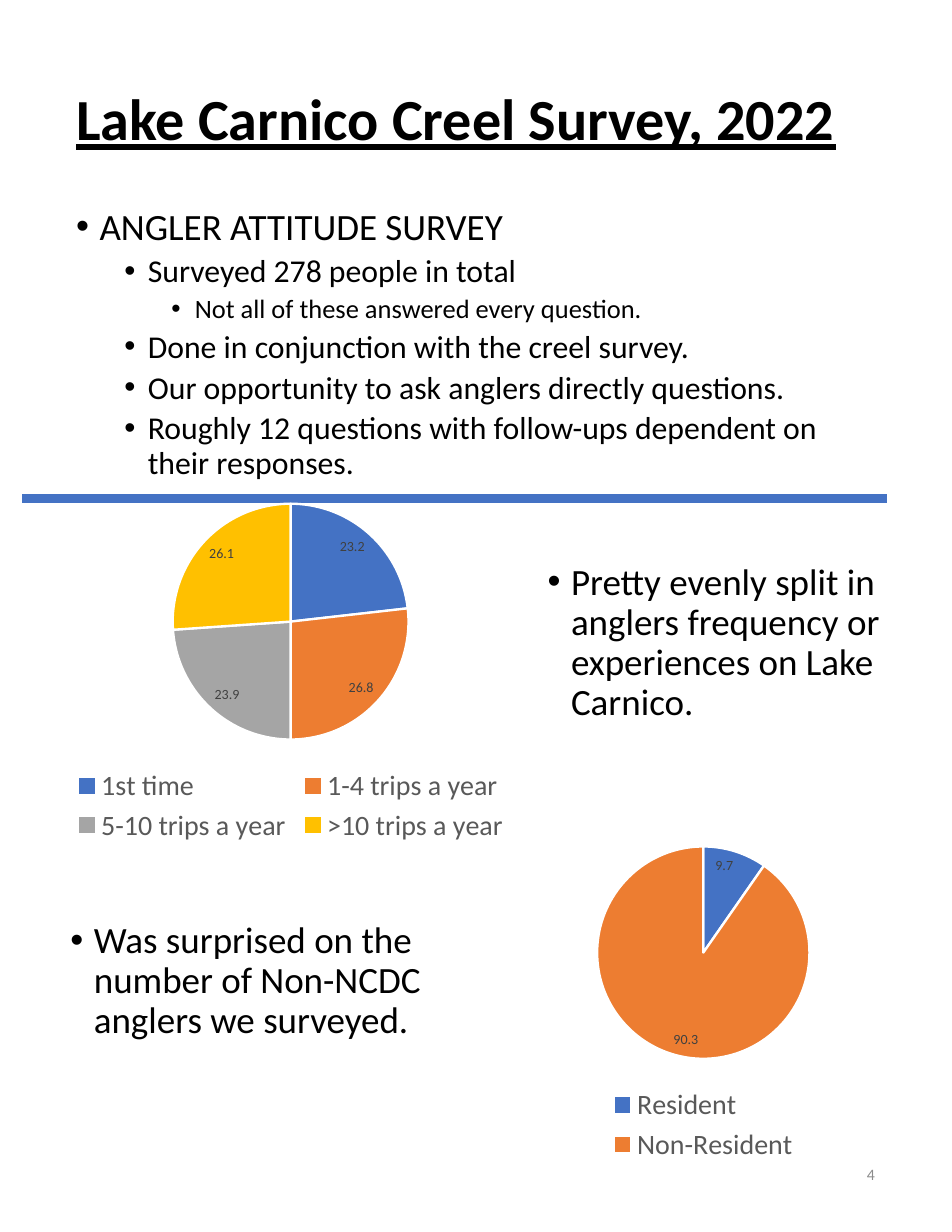
from lxml import etree
from pptx import Presentation
from pptx import util as u
from pptx.chart.data import CategoryChartData
from pptx.dml.color import RGBColor
from pptx.enum import chart as ch, shapes, text
from pptx.oxml.ns import qn

COLORS = {"black": "000000", "white": "FFFFFF", "blue": "4472C4", "orange": "ED7D31",
          "gray": "A5A5A5", "gold": "FFC000", "legend": "595959", "label": "404040",
          "number": "8C8C8C"}
SLICES = ["blue", "orange", "gray", "gold"]
# Per list level: text size, space before, left indent
LEVELS = [(23.8, 8.5, 0.21), (20.4, 4.2, 0.64), (17, 4.2, 1.06)]
HANG = 0.21


def rgb(name):
    return RGBColor.from_string(COLORS[name])


class SlideBuilder:
    font = "Calibri"

    def __init__(self, prs):
        self.slide = prs.slides.add_slide(prs.slide_layouts[1])

    def style(self, font, size, color="black", **values):
        for key, value in {"name": self.font, "size": u.Pt(size), **values}.items():
            setattr(font, key, value)
        font.color.rgb = rgb(color)

    def place(self, sp, box, anchor):
        for key, value in zip(("left", "top", "width", "height"), box):
            setattr(sp, key, u.Inches(value))
        tf = sp.text_frame
        frame = {"word_wrap": True, "auto_size": text.MSO_AUTO_SIZE.NONE,
                 "vertical_anchor": anchor}
        for key, value in frame.items():
            setattr(tf, key, value)
        return tf

    def textbox(self):
        return self.slide.shapes.add_textbox(0, 0, 0, 0)

    def line_of_text(self, sp, box, words, size, align, color="black", **values):
        p = self.place(sp, box, text.MSO_ANCHOR.MIDDLE).paragraphs[0]
        p.alignment, p.line_spacing = align, 0.9
        r = p.add_run()
        r.text = words
        self.style(r.font, size, color, **values)

    def bullets(self, sp, box, items):
        tf = self.place(sp, box, text.MSO_ANCHOR.TOP)
        for i, (level, words) in enumerate(items):
            p = tf.add_paragraph() if i else tf.paragraphs[0]
            size, before, indent = LEVELS[level]
            paragraph = {"level": level, "line_spacing": 0.9, "space_before": u.Pt(before),
                         "alignment": text.PP_ALIGN.LEFT}
            for key, value in paragraph.items():
                setattr(p, key, value)
            pPr = p._p.get_or_add_pPr()
            pPr.set("marL", str(u.Inches(indent)))
            pPr.set("indent", str(-u.Inches(HANG)))
            etree.SubElement(pPr, qn("a:buFont")).set("typeface", "Arial")
            etree.SubElement(pPr, qn("a:buChar")).set("char", "•")
            r = p.add_run()
            r.text = words
            self.style(r.font, size)

    def rule(self, x1, x2, y, width):
        line = self.slide.shapes.add_connector(
            shapes.MSO_CONNECTOR.STRAIGHT, *map(u.Inches, (x1, y, x2, y)))
        line.line.color.rgb = rgb("blue")
        line.line.width = u.Pt(width)
        etree.SubElement(line._element.spPr, qn("a:effectLst"))

    def pie(self, box, values):
        data = CategoryChartData()
        data.categories = list(values)
        data.add_series("Series 1", list(values.values()))
        chart = self.slide.shapes.add_chart(
            ch.XL_CHART_TYPE.PIE, *map(u.Inches, box), data).chart
        self.style(chart.font, 10)
        chart.has_title = False
        chart.has_legend = True
        chart.legend.position = ch.XL_LEGEND_POSITION.BOTTOM
        chart.legend.include_in_layout = False
        self.style(chart.legend.font, 18, "legend")
        plot = chart.plots[0]
        plot.vary_by_categories = True
        for i, color in enumerate(SLICES[:len(values)]):
            fmt = plot.series[0].points[i].format
            fmt.fill.solid()
            fmt.fill.fore_color.rgb = rgb(color)
            fmt.line.color.rgb = rgb("white")
            fmt.line.width = u.Pt(1.5)
        labels = plot.series[0].data_labels
        labels.show_value = True
        labels.show_percentage = False
        labels.position = ch.XL_LABEL_POSITION.INSIDE_END
        self.style(labels.font, 9, "label")


def main():
    prs = Presentation()
    prs.slide_width, prs.slide_height = u.Inches(8.5), u.Inches(11)
    s = SlideBuilder(prs)
    title, body = s.slide.placeholders

    # Title and survey summary
    s.line_of_text(title, (0.58, 0.59, 7.33, 1), "Lake Carnico Creel Survey, 2022", 37.4,
                   text.PP_ALIGN.LEFT, bold=True, underline=True)
    s.bullets(body, (0.58, 1.81, 7.33, 8.83), [
        (0, "ANGLER ATTITUDE SURVEY"),
        (1, "Surveyed 278 people in total"),
        (2, "Not all of these answered every question."),
        (1, "Done in conjunction with the creel survey."),
        (1, "Our opportunity to ask anglers directly questions."),
        (1, "Roughly 12 questions with follow-ups dependent on their responses."),
    ])

    # Slide number
    s.line_of_text(s.textbox(), (6, 10.2, 1.91, 0.59), "4", 10.2,
                   text.PP_ALIGN.RIGHT, "number")

    # Trip frequency
    s.bullets(s.textbox(), (4.79, 4.98, 3.52, 2.6), [
        (0, "Pretty evenly split in anglers frequency or experiences on Lake Carnico.")])
    s.rule(0.2, 7.92, 4.45, 6)
    s.pie((0.2, 4.36, 4.79, 3.21), {"1st time": 23.2, "1-4 trips a year": 26.8,
                                    "5-10 trips a year": 23.9, ">10 trips a year": 26.1})

    # Residency
    s.bullets(s.textbox(), (0.53, 8.18, 3.52, 2.6), [
        (0, "Was surprised on the number of Non-NCDC anglers we surveyed.")])
    s.pie((4.45, 7.42, 3.66, 3), {"Resident": 9.7, "Non-Resident": 90.3})

    prs.save("out.pptx")


if __name__ == "__main__":
    main()
